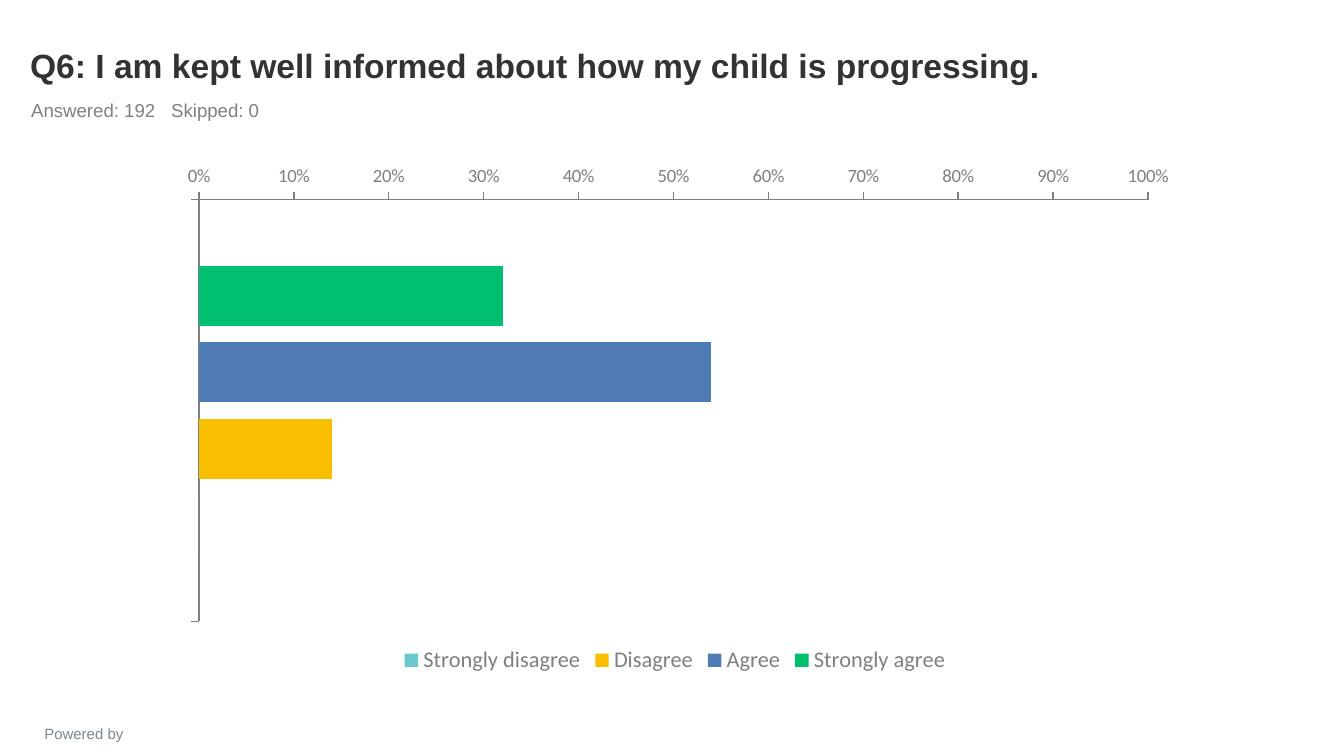
import pptx
import pptx.chart.data
import pptx.dml.color
import pptx.enum.chart
import pptx.enum.text
import pptx.util
from lxml import etree

RGB = pptx.dml.color.RGBColor
INK = RGB(0x33, 0x33, 0x33)
GRAY = RGB(0x80, 0x80, 0x80)
AXIS = RGB(0x7F, 0x7F, 0x7F)
SLATE = RGB(0x7C, 0x87, 0x8E)
GREEN = RGB(0x00, 0xBF, 0x6F)
BLUE = RGB(0x50, 0x7C, 0xB6)
GOLD = RGB(0xF9, 0xBE, 0x00)
TEAL = RGB(0x6B, 0xC8, 0xCD)
SCALE = 914400 / 134.4  # EMU per px


def px(n):
    return pptx.util.Emu(round(n * SCALE))


def label(box, text, size, color, bold=False, tab=None):
    frame = slide.shapes.add_textbox(*map(px, box)).text_frame
    frame.word_wrap = True
    para = frame.paragraphs[0]
    para.text = text
    if tab:
        props = para._p.get_or_add_pPr()
        ns = "{http://schemas.openxmlformats.org/drawingml/2006/main}"
        stops = etree.SubElement(props, ns + "tabLst")
        etree.SubElement(stops, ns + "tab", pos=str(px(tab)), algn="l")
    font = para.runs[0].font
    font.name, font.size, font.bold = "Arial", pptx.util.Pt(size), bold
    font.color.rgb = color
    return frame


deck = pptx.Presentation()
deck.slide_width, deck.slide_height = px(1344), px(756)
slide = deck.slides.add_slide(deck.slide_layouts[6])

# Footer, title and counts
foot = label((7, 718, 154, 24), "Powered by", 8, SLATE)
foot.paragraphs[0].alignment = pptx.enum.text.PP_ALIGN.CENTER
title = label((17, 11, 1210, 81),
              "Q6: I am kept well informed about how my child is progressing.",
              18, INK, bold=True)
title.vertical_anchor = pptx.enum.text.MSO_ANCHOR.BOTTOM
label((18, 92, 1210, 35), "Answered: 192\tSkipped: 0", 10, GRAY, tab=140)

# Bar chart
bars = [("Strongly agree", 0.32, GREEN), ("Agree", 0.54, BLUE),
        ("Disagree", 0.14, GOLD), ("Strongly disagree", 0, TEAL)]
data = pptx.chart.data.CategoryChartData(number_format="0%")
data.categories = [" "]
for name, share, color in bars:
    data.add_series(name, [share])
kinds = pptx.enum.chart
chart = slide.shapes.add_chart(kinds.XL_CHART_TYPE.BAR_CLUSTERED,
                               px(161), px(155), px(1028), px(524), data).chart
chart.has_title = False
chart.font.name, chart.font.size = "Calibri", pptx.util.Pt(18)
chart.font.color.rgb = INK

plot = chart.plots[0]
plot.gap_width, plot.overlap, plot.vary_by_categories = 219, -27, False
for series, (name, share, color) in zip(plot.series, bars):
    series.format.fill.solid()
    series.format.fill.fore_color.rgb = color

# Axes
cat, val = chart.category_axis, chart.value_axis
for axis in (cat, val):
    axis.has_major_gridlines = False
    axis.major_tick_mark = kinds.XL_TICK_MARK.OUTSIDE
    axis.minor_tick_mark = kinds.XL_TICK_MARK.NONE
    axis.tick_labels.font.size = pptx.util.Pt(10)
    axis.tick_labels.font.color.rgb = AXIS
    axis.format.line.color.rgb = AXIS
    axis.format.line.width = pptx.util.Pt(0.75)
cat.reverse_order = True
cat.crosses = kinds.XL_AXIS_CROSSES.MINIMUM
cat.tick_label_position = kinds.XL_TICK_LABEL_POSITION.LOW
val.minimum_scale, val.maximum_scale, val.major_unit = 0, 1, 0.1
val.tick_labels.number_format = "0%"
val.tick_labels.number_format_is_linked = False

# Legend
chart.has_legend = True
legend = chart.legend
legend.position = kinds.XL_LEGEND_POSITION.BOTTOM
legend.include_in_layout = False
legend.font.size = pptx.util.Pt(12)
legend.font.color.rgb = AXIS

deck.save("out.pptx")
